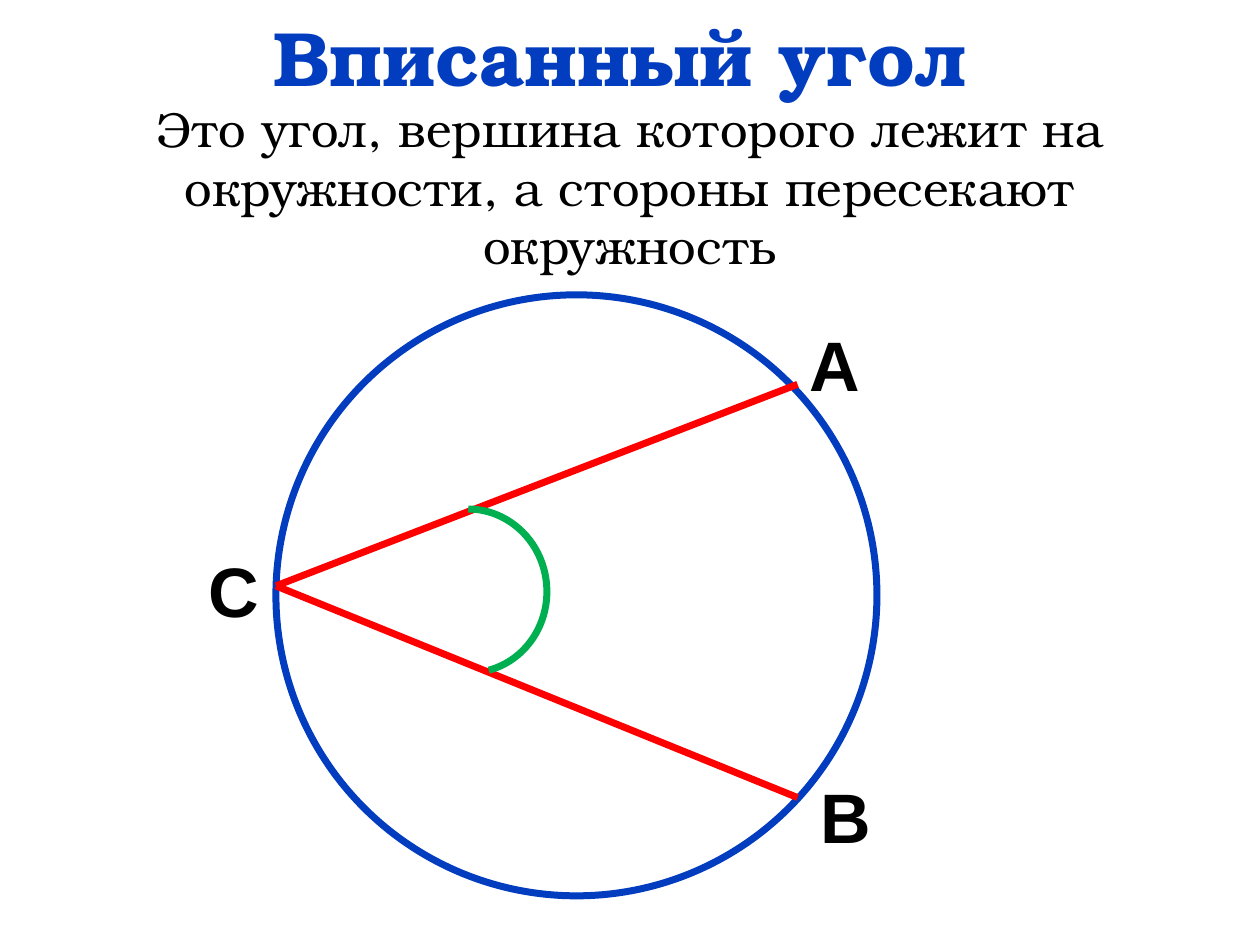
from pptx import Presentation
from pptx.dml.color import RGBColor
from pptx.enum import shapes, text
from pptx.oxml.ns import qn
from pptx.util import Inches, Pt
from lxml import etree

COLORS = {"blue": "033DBF", "red": "FF0000", "green": "00B050", "black": "000000"}
SERIF, SANS = "TeX Gyre Bonum", "Arial"


def write(frame, words, color, align, **font_format):
    frame.word_wrap = True
    paragraph = frame.paragraphs[0]
    paragraph.alignment = align
    run = paragraph.add_run()
    run.text = words
    for name, value in font_format.items():
        setattr(run.font, name, value)
    run.font.color.rgb = RGBColor.from_string(COLORS[color])


def outline(part, color):
    part.line.color.rgb = RGBColor.from_string(COLORS[color])
    part.line.width = Pt(4)


prs = Presentation()
prs.slide_width, prs.slide_height = Inches(10), Inches(7.5)
slide = prs.slides.add_slide(prs.slide_layouts[5])
CENTER, LEFT = text.PP_ALIGN.CENTER, text.PP_ALIGN.LEFT

# Title
title = slide.shapes.title
title.left, title.top, title.width, title.height = map(Inches, (0.84, 0, 8.17, 0.89))
title.text_frame.auto_size = text.MSO_AUTO_SIZE.NONE
title.text_frame.vertical_anchor = text.MSO_ANCHOR.MIDDLE
write(title.text_frame, "Вписанный угол", "blue", CENTER,
      name=SERIF, size=Pt(44), bold=True)

# Definition
definition = slide.shapes.add_textbox(*map(Inches, (0.43, 0.73, 9.14, 1.51)))
write(definition.text_frame,
      "Это угол, вершина которого лежит на окружности, а стороны пересекают окружность",
      "black", CENTER, name=SERIF, size=Pt(28))
definition.text_frame.auto_size = text.MSO_AUTO_SIZE.SHAPE_TO_FIT_TEXT

# Circle
circle = slide.shapes.add_shape(shapes.MSO_SHAPE.OVAL,
                                *map(Inches, (2.19, 2.34, 4.77, 4.77)))

# Sides of the angle, from vertex C to points A and B
vertex = (2.19, 4.65)
sides = slide.shapes.add_group_shape()
for point in ((6.33, 3.05), (6.33, 6.33)):
    side = sides.shapes.add_connector(shapes.MSO_CONNECTOR.STRAIGHT,
                                      *map(Inches, vertex + point))
    outline(side, "red")
    etree.SubElement(side._element.spPr, qn("a:effectLst"))

# Angle mark
angle_mark = slide.shapes.add_shape(shapes.MSO_SHAPE.ARC,
                                    *map(Inches, (3.07, 4.07, 1.3, 1.24)))
angle_mark.rotation = 84.9
angle_mark.adjustments[0] = 110.85
angle_mark.adjustments[1] = 210.53

for curve, color in ((circle, "blue"), (angle_mark, "green")):
    curve.shadow.inherit = False
    curve.fill.background()
    outline(curve, color)

# Point labels
for letter, left, top, width in (("С", 1.56, 4.3, 0.62),
                                 ("А", 6.33, 2.5, 0.62),
                                 ("В", 6.41, 6.09, 1.02)):
    label = slide.shapes.add_textbox(*map(Inches, (left, top, width, 0.77)))
    write(label.text_frame, letter, "black", LEFT, name=SANS, size=Pt(40), bold=True)
    label.text_frame.auto_size = text.MSO_AUTO_SIZE.SHAPE_TO_FIT_TEXT

prs.save("out.pptx")
